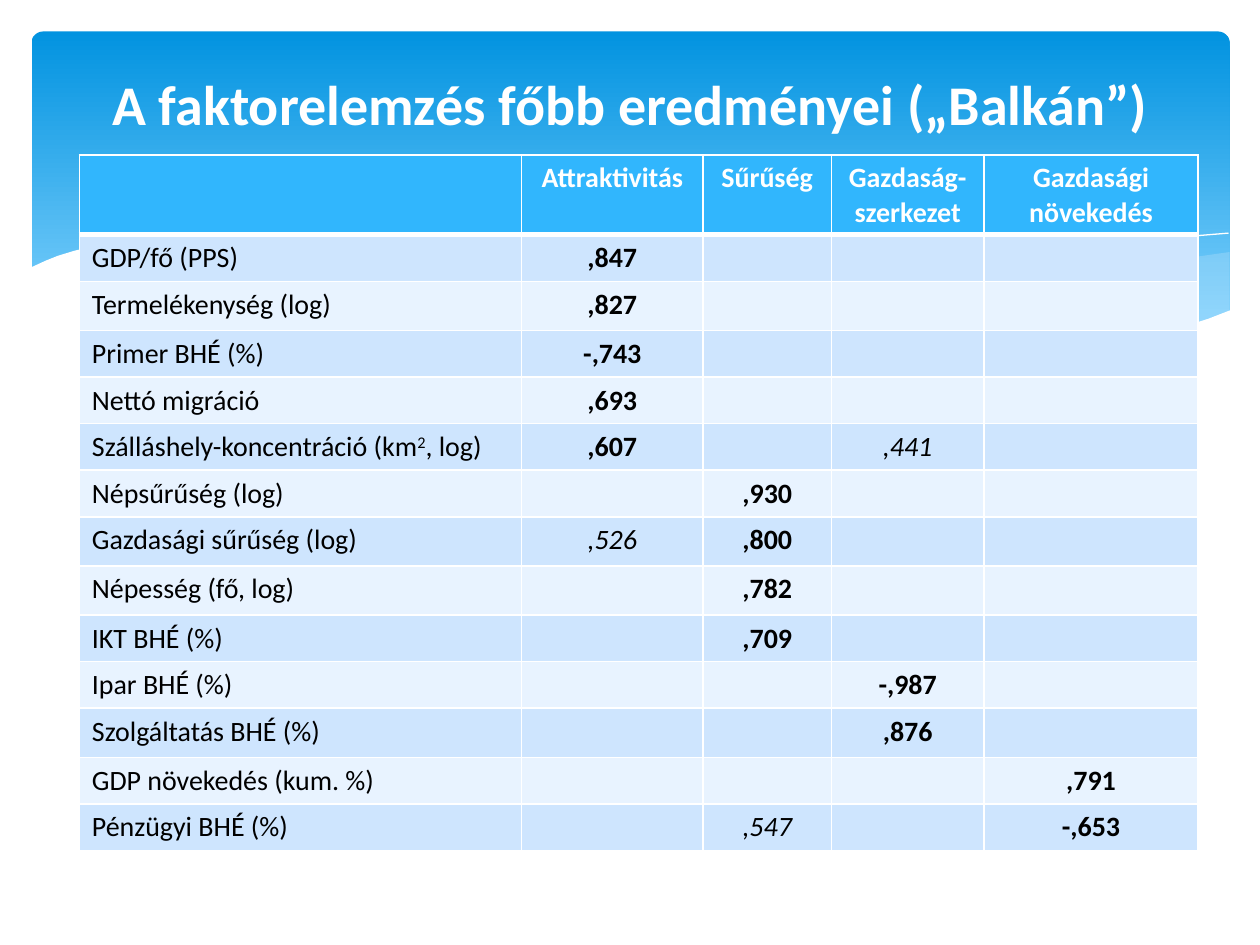
import pptx
import pptx.dml.color
import pptx.enum.shapes
import pptx.enum.text
import pptx.oxml.ns
import pptx.util
from lxml import etree

Inches = pptx.util.Inches
Pt = pptx.util.Pt
RGBColor = pptx.dml.color.RGBColor
qn = pptx.oxml.ns.qn
CENTER = pptx.enum.text.PP_ALIGN.CENTER
MIDDLE = pptx.enum.text.MSO_ANCHOR.MIDDLE

WHITE = RGBColor(0xFF, 0xFF, 0xFF)
BLACK = RGBColor(0, 0, 0)
BANNER_TOP = RGBColor(0x02, 0x93, 0xE0)
BANNER_BOTTOM = RGBColor(0x83, 0xD3, 0xFE)
WAVE = RGBColor(0xC6, 0xE7, 0xFC)
HEADER = RGBColor(0x31, 0xB6, 0xFD)
BANDS = (RGBColor(0xCE, 0xE5, 0xFE), RGBColor(0xE8, 0xF3, 0xFF))

RIGHT_WAVE = [
    (9.76, 2), (9.48, 2.04), (9.21, 2.1), (8.91, 2.16), (8.61, 2.23), (8.05, 2.37),
    (7.53, 2.48), (7.06, 2.57), (6.61, 2.65), (6.91, 2.69), (7.19, 2.72), (7.45, 2.75),
    (7.69, 2.77), (8.03, 2.78), (8.35, 2.77), (8.63, 2.75), (8.89, 2.72), (9.13, 2.67),
    (9.35, 2.62), (9.49, 2.57), (9.63, 2.52), (9.76, 2.47)]
MIDDLE_WAVE = [
    (8.93, 2.73), (8.66, 2.69), (8.37, 2.65), (8.07, 2.6), (7.75, 2.54), (7.41, 2.47),
    (7.06, 2.4), (6.68, 2.31), (6.29, 2.22), (5.98, 2.14), (5.69, 2.08), (5.41, 2.03),
    (5.14, 1.98), (4.89, 1.94), (4.65, 1.91), (4.42, 1.89), (4.2, 1.87), (3.8, 1.85),
    (3.44, 1.86), (3.13, 1.88), (2.86, 1.91), (3.23, 1.96), (3.62, 2.03), (4.04, 2.11),
    (4.49, 2.22), (4.91, 2.32), (5.3, 2.4), (5.66, 2.48), (6.01, 2.55), (6.34, 2.61),
    (6.65, 2.66), (6.95, 2.7), (7.22, 2.74), (7.48, 2.76), (7.85, 2.78), (8.28, 2.78),
    (8.57, 2.77), (8.76, 2.75)]
LONG_CURVE = [
    (3.09, 1.95), (3.28, 1.92), (3.53, 1.89), (3.87, 1.87), (4.16, 1.87), (4.5, 1.88),
    (4.89, 1.9), (5.33, 1.94), (5.82, 2), (6.36, 2.08), (6.95, 2.19), (7.27, 2.26),
    (7.6, 2.33), (7.95, 2.41), (8.31, 2.51), (8.69, 2.61), (9.07, 2.72)]
SHORT_CURVE = [
    (6.13, 2.57), (6.53, 2.46), (6.95, 2.35), (7.48, 2.23), (8.06, 2.1), (8.66, 1.99),
    (8.95, 1.94), (9.24, 1.9), (9.51, 1.87), (9.75, 1.85)]
WHITE_WAVE = [
    (9.77, 2.46), (9.59, 2.53), (9.4, 2.59), (9.2, 2.65), (8.99, 2.69), (8.75, 2.73),
    (8.5, 2.75), (8.23, 2.77), (7.93, 2.76), (7.61, 2.75), (7.26, 2.72), (6.88, 2.68),
    (6.48, 2.62), (6.03, 2.54), (5.55, 2.45), (5.03, 2.33), (4.47, 2.2), (3.91, 2.07),
    (3.4, 1.97), (2.92, 1.9), (2.5, 1.86), (2.11, 1.84), (1.77, 1.84), (1.46, 1.85),
    (1.19, 1.87), (0.95, 1.91), (0.76, 1.95), (0.59, 1.99), (0.46, 2.03), (0.36, 2.07),
    (0.23, 2.13), (0.23, 3.29), (9.77, 3.29)]

COLUMN_WIDTHS = (3.51, 1.44, 1.02, 1.21, 1.7)
HEADER_HEIGHT = 0.63
ROW_HEIGHT = 0.37
TALL_ROW_HEIGHT = 0.39
TALL_ROWS = (2, 7, 8, 11)
STRONG_LOADING = 0.6
ROWS = [
    ("", "Attraktivitás", "Sűrűség", "Gazdaság-\nszerkezet", "Gazdasági növekedés"),
    ("GDP/fő (PPS)", ",847", "", "", ""),
    ("Termelékenység (log)", ",827", "", "", ""),
    ("Primer BHÉ (%)", "-,743", "", "", ""),
    ("Nettó migráció", ",693", "", "", ""),
    ("Szálláshely-koncentráció (km^2^, log)", ",607", "", ",441", ""),
    ("Népsűrűség (log)", "", ",930", "", ""),
    ("Gazdasági sűrűség (log)", ",526", ",800", "", ""),
    ("Népesség (fő, log)", "", ",782", "", ""),
    ("IKT BHÉ (%)", "", ",709", "", ""),
    ("Ipar BHÉ (%)", "", "", "-,987", ""),
    ("Szolgáltatás BHÉ (%)", "", "", ",876", ""),
    ("GDP növekedés (kum. %)", "", "", "", ",791"),
    ("Pénzügyi BHÉ (%)", "", ",547", "", "-,653"),
]


class FactorSlide:
    font = "Calibri"
    title_size = 32
    table_size = 16

    def __init__(self, deck):
        self.page = deck.slides.add_slide(deck.slide_layouts[6])

    def style(self, span, size, color, bold=False, italic=False):
        span.font.name = self.font
        span.font.size = Pt(size)
        span.font.color.rgb = color
        span.font.bold = bold
        span.font.italic = italic

    def banner(self, left, top, width, height):
        box = self.page.shapes.add_shape(
            pptx.enum.shapes.MSO_SHAPE.ROUNDED_RECTANGLE,
            Inches(left), Inches(top), Inches(width), Inches(height))
        box.adjustments[0] = 0.034
        box.shadow.inherit = False
        box.line.fill.background()
        box.fill.gradient()
        box.fill.gradient_angle = 270
        stops = ((0, BANNER_TOP), (0.9, BANNER_BOTTOM))
        for stop, (position, color) in zip(box.fill.gradient_stops, stops):
            stop.position = position
            stop.color.rgb = color

    def outline(self, points, close):
        corners = [(Inches(x), Inches(y)) for x, y in points]
        builder = self.page.shapes.build_freeform(*corners[0])
        builder.add_line_segments(corners[1:], close=close)
        shape = builder.convert_to_shape()
        shape.shadow.inherit = False
        return shape

    def wave(self, points, color, opacity=100):
        shape = self.outline(points, True)
        shape.line.fill.background()
        shape.fill.solid()
        shape.fill.fore_color.rgb = color
        if opacity < 100:
            tint = shape.fill._xPr.find(".//" + qn("a:srgbClr"))
            etree.SubElement(tint, qn("a:alpha"), val=str(opacity * 1000))

    def curve(self, points):
        shape = self.outline(points, False)
        shape.fill.background()
        shape.line.color.rgb = WHITE
        shape.line.width = Pt(0)

    def title(self, text, left, top, width, height):
        box = self.page.shapes.add_textbox(
            Inches(left), Inches(top), Inches(width), Inches(height))
        frame = box.text_frame
        frame.word_wrap = True
        frame.vertical_anchor = MIDDLE
        frame.text = text
        para = frame.paragraphs[0]
        para.alignment = CENTER
        self.style(para.runs[0], self.title_size, WHITE, bold=True)

    def borders(self, cell, row):
        properties = cell._tc.get_or_add_tcPr()
        thick_side = {0: "lnB", 1: "lnT"}.get(row)
        for position, side in enumerate(("lnL", "lnR", "lnT", "lnB")):
            width = Pt(3 if side == thick_side else 1)
            line = etree.Element(qn("a:" + side), w=str(width))
            fill = etree.SubElement(line, qn("a:solidFill"))
            etree.SubElement(fill, qn("a:srgbClr"), val=str(WHITE))
            properties.insert(position, line)

    def cell(self, cell, text, row, column):
        cell.fill.solid()
        cell.fill.fore_color.rgb = BANDS[(row - 1) % 2] if row else HEADER
        self.borders(cell, row)
        strong = row == 0
        italic = False
        if row and column and text:
            strong = abs(float(text.replace(",", "."))) >= STRONG_LOADING
            italic = not strong
        cell.text_frame.text = text.split("^")[0]
        for piece in text.split("^")[1:]:
            cell.text_frame.paragraphs[0].add_run().text = piece
        for para in cell.text_frame.paragraphs:
            if column:
                para.alignment = CENTER
            for index, span in enumerate(para.runs):
                self.style(span, self.table_size, BLACK if row else WHITE, strong, italic)
                if index % 2:
                    span.font._element.set("baseline", "30000")
            if not text:
                etree.SubElement(para._p, qn("a:endParaRPr"), sz=str(self.table_size * 100))

    def table(self, rows, left, top):
        heights = [HEADER_HEIGHT] + [
            TALL_ROW_HEIGHT if row in TALL_ROWS else ROW_HEIGHT for row in range(1, len(rows))]
        table = self.page.shapes.add_table(
            len(rows), len(COLUMN_WIDTHS), Inches(left), Inches(top),
            Inches(sum(COLUMN_WIDTHS)), Inches(sum(heights))).table
        for column, width in zip(table.columns, COLUMN_WIDTHS):
            column.width = Inches(width)
        for row, texts in enumerate(rows):
            table.rows[row].height = Inches(heights[row])
            for column, text in enumerate(texts):
                self.cell(table.cell(row, column), text, row, column)


def main():
    deck = pptx.Presentation()
    deck.slide_width = Inches(10)
    deck.slide_height = Inches(7.5)
    slide = FactorSlide(deck)
    slide.banner(0.25, 0.25, 9.51, 2.7)
    slide.wave(RIGHT_WAVE, WAVE, 29)
    slide.wave(MIDDLE_WAVE, WAVE, 40)
    slide.curve(LONG_CURVE)
    slide.curve(SHORT_CURVE)
    slide.wave(WHITE_WAVE, WHITE)
    slide.title("A faktorelemzés főbb eredményei („Balkán”)", 0.2, 0.13, 9.61, 1.37)
    slide.table(ROWS, 0.63, 1.23)
    deck.save("out.pptx")


if __name__ == "__main__":
    main()
